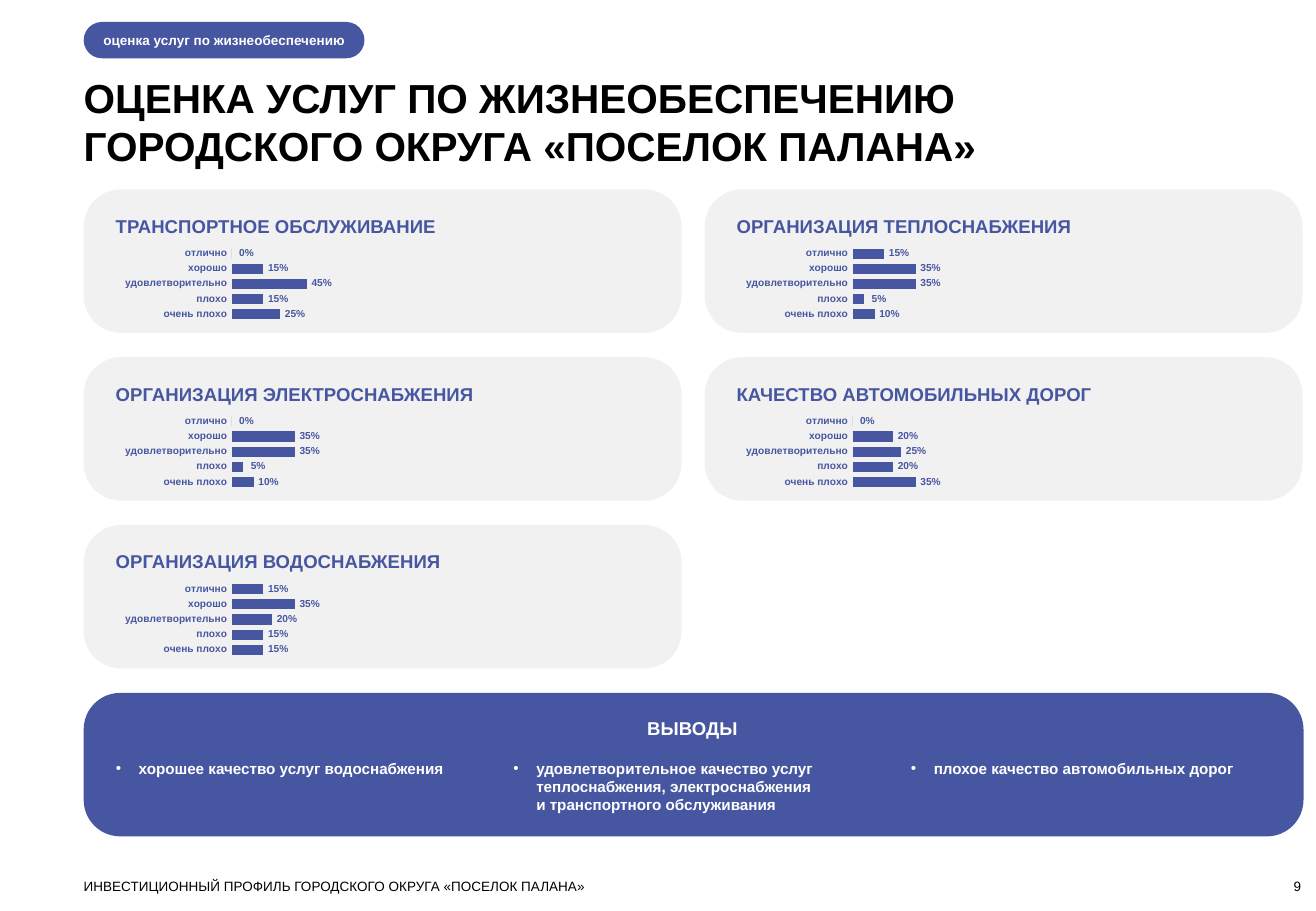
import pptx
import pptx.chart.data
import pptx.dml.color
import pptx.enum.chart
import pptx.enum.shapes
import pptx.enum.text
import pptx.oxml
import pptx.oxml.ns
import pptx.util
from dataclasses import dataclass

Cm, Pt = pptx.util.Cm, pptx.util.Pt
RGB = pptx.dml.color.RGBColor
ALIGN = pptx.enum.text.PP_ALIGN
ANCHOR = pptx.enum.text.MSO_ANCHOR
ROUND = pptx.enum.shapes.MSO_SHAPE.ROUNDED_RECTANGLE


@dataclass
class Theme:
    font: str = "Arial"
    blue: RGB = RGB(0x47, 0x56, 0xA0)
    gray: RGB = RGB(0xF1, 0xF1, 0xF1)
    black: RGB = RGB(0, 0, 0)
    white: RGB = RGB(255, 255, 255)
    title: int = 24
    head: int = 11
    body: int = 9
    small: int = 8
    label: int = 6


theme = Theme()


def write(shape, box, text, size, color, bold=True, align=ALIGN.LEFT,
          anchor=ANCHOR.TOP, inset=0):
    """Place a shape at box (cm) and set its one paragraph of text."""
    shape.left, shape.top, shape.width, shape.height = map(Cm, box)
    frame = shape.text_frame
    frame.word_wrap = True
    frame.auto_size = pptx.enum.text.MSO_AUTO_SIZE.NONE
    frame.vertical_anchor = anchor
    frame.margin_left = Cm(inset)
    frame.margin_top = frame.margin_right = frame.margin_bottom = 0
    frame.text = text
    para = frame.paragraphs[0]
    para.alignment = align
    para.space_before = Pt(0)
    para.line_spacing = 1.0
    font = para.font
    font.name, font.size, font.bold = theme.font, Pt(size), bold
    font.color.rgb = color
    return para


def panel(box, color, curve):
    """Add a rounded panel without outline or shadow."""
    shape = shapes.add_shape(ROUND, *map(Cm, box))
    shape.adjustments[0] = curve
    shape.shadow.inherit = False
    shape.fill.solid()
    shape.fill.fore_color.rgb = color
    shape.line.fill.background()
    return shape


deck = pptx.Presentation()
deck.slide_width, deck.slide_height = Cm(27.51), Cm(19.05)
slide = deck.slides.add_slide(deck.slide_layouts.get_by_name("Comparison"))
shapes = slide.shapes
holders = slide.placeholders

# Title and section tag
left = 1.75
write(shapes.title, (left, 1.52, 20.32, 2.06),
      "ОЦЕНКА УСЛУГ ПО ЖИЗНЕОБЕСПЕЧЕНИЮ ГОРОДСКОГО ОКРУГА «ПОСЕЛОК ПАЛАНА»",
      theme.title, theme.black)
tag = (left, 0.46, 5.87, 0.76)
write(panel(tag, theme.blue, 0.5), tag, "оценка услуг по жизнеобеспечению",
      theme.small, theme.white, anchor=ANCHOR.MIDDLE, inset=0.3)

# Rating cards: column, row, heading, shares from worst to best
grades = ["очень плохо", "плохо", "удовлетворительно", "хорошо", "отлично"]
cards = [
    (0, 0, "ТРАНСПОРТНОЕ ОБСЛУЖИВАНИЕ", [0.25, 0.15, 0.45, 0.15, 0]),
    (0, 1, "ОРГАНИЗАЦИЯ ЭЛЕКТРОСНАБЖЕНИЯ", [0.1, 0.05, 0.35, 0.35, 0]),
    (0, 2, "ОРГАНИЗАЦИЯ ВОДОСНАБЖЕНИЯ", [0.15, 0.15, 0.2, 0.35, 0.15]),
    (1, 0, "ОРГАНИЗАЦИЯ ТЕПЛОСНАБЖЕНИЯ", [0.1, 0.05, 0.35, 0.35, 0.15]),
    (1, 1, "КАЧЕСТВО АВТОМОБИЛЬНЫХ ДОРОГ", [0.35, 0.2, 0.25, 0.2, 0]),
]
top, pitch, high = 3.96, 3.51, 3.0
span = 0.66
ns = pptx.oxml.ns.nsdecls("c")
plot_box = f"""<c:layout {ns}><c:manualLayout>
<c:layoutTarget val="inner"/><c:xMode val="edge"/><c:yMode val="edge"/>
<c:x val="0.315"/><c:y val="0.01"/><c:w val="{span}"/><c:h val="0.97"/>
</c:manualLayout></c:layout>"""
no_lines = f"""<c:extLst {ns}>
<c:ext uri="{{CE6537A1-D6FC-4f65-9D91-7224C49458BB}}"
 xmlns:c15="http://schemas.microsoft.com/office/drawing/2012/chart">
<c15:showLeaderLines val="0"/></c:ext></c:extLst>"""

for col, row, head, shares in cards:
    x, y = left + col * 12.98, top + row * pitch
    panel((x, y, 12.5, high), theme.gray, 0.26)
    box = (x + 0.67, y + 0.53, 9.35, 0.48)
    write(shapes.add_textbox(0, 0, 0, 0), box, head, theme.head, theme.blue)

    data = pptx.chart.data.CategoryChartData(number_format="0%")
    data.categories = grades
    data.add_series("Series 1", shares)
    data.add_series("Series 2", [1] * len(grades))
    chart = shapes.add_chart(
        pptx.enum.chart.XL_CHART_TYPE.BAR_STACKED_100,
        Cm(x + 0.67), Cm(y + 1.17), Cm(7.7), Cm(1.63), data).chart
    chart.has_legend = chart.has_title = False
    chart.font.name, chart.font.size = theme.font, Pt(theme.label)
    chart.font.bold = True
    chart.font.color.rgb = theme.blue
    chart.value_axis.visible = False
    chart.value_axis.has_major_gridlines = False
    axis = chart.category_axis
    axis.major_tick_mark = pptx.enum.chart.XL_TICK_MARK.NONE
    axis.format.line.fill.background()
    plot = chart.plots[0]
    plot.gap_width, plot.overlap, plot.vary_by_categories = 50, 100, False
    for bars, color in zip(plot.series, (theme.blue, theme.gray)):
        bars.format.fill.solid()
        bars.format.fill.fore_color.rgb = color

    # Each value stands just past the end of its bar, without a leader line
    bars = plot.series[0]
    labels = bars.data_labels
    labels.show_value = True
    labels.number_format, labels.number_format_is_linked = "0%", False
    for i, share in enumerate(shares):
        label = bars.points[i].data_label
        label.position = pptx.enum.chart.XL_LABEL_POSITION.CENTER
        font = label.font
        font.name, font.size, font.bold = theme.font, Pt(theme.label), True
        font.color.rgb = theme.blue
        shift = share / (1 + share) * span / 2 + 0.04
        place = pptx.oxml.parse_xml(
            f'<c:layout {ns}><c:manualLayout><c:x val="{shift:.3f}"/>'
            '<c:y val="0"/></c:manualLayout></c:layout>')
        label._dLbl.insert(1, place)
    group = labels._element
    for line in group.findall(pptx.oxml.ns.qn("c:showLeaderLines")):
        line.set("val", "0")
    group.append(pptx.oxml.parse_xml(no_lines))

    area = chart.element.find(".//" + pptx.oxml.ns.qn("c:plotArea"))
    for old in area.findall(pptx.oxml.ns.qn("c:layout")):
        area.remove(old)
    area.insert(0, pptx.oxml.parse_xml(plot_box))

# Conclusions, with the band kept behind its text
base = top + 3 * pitch
band = panel((left, base, 25.5, high), theme.blue, 0.254)
band.element.getparent().insert(2, band.element)
write(holders[1], (left, base + 0.5, 25.45, 0.48), "ВЫВОДЫ",
      theme.head, theme.white, align=ALIGN.CENTER)
points = [
    "хорошее качество услуг водоснабжения",
    "удовлетворительное качество услуг теплоснабжения, "
    "электроснабжения\vи транспортного обслуживания",
    "плохое качество автомобильных дорог",
]
for i, point in enumerate(points):
    box = (left + 0.67 + i * 8.31, base + 1.38, 7.6, 1.15)
    para = write(holders[i + 2], box, point, theme.body, theme.white)
    props = para._p.get_or_add_pPr()
    props.set("marL", str(Cm(0.48)))
    props.set("indent", str(-Cm(0.48)))
    bullet = pptx.oxml.parse_xml(
        f'<a:buChar {pptx.oxml.ns.nsdecls("a")} char="•"/>')
    props.find(pptx.oxml.ns.qn("a:defRPr")).addprevious(bullet)

# Footer
foot = [
    (left, 20.32, "ИНВЕСТИЦИОННЫЙ ПРОФИЛЬ ГОРОДСКОГО ОКРУГА «ПОСЕЛОК ПАЛАНА»",
     ALIGN.LEFT),
    (25.17, 2.03, "9", ALIGN.RIGHT),
]
for x, wide, text, align in foot:
    write(shapes.add_textbox(0, 0, 0, 0), (x, 18.36, wide, 0.33), text,
          theme.small, theme.black, bold=False, align=align)

deck.save("out.pptx")
